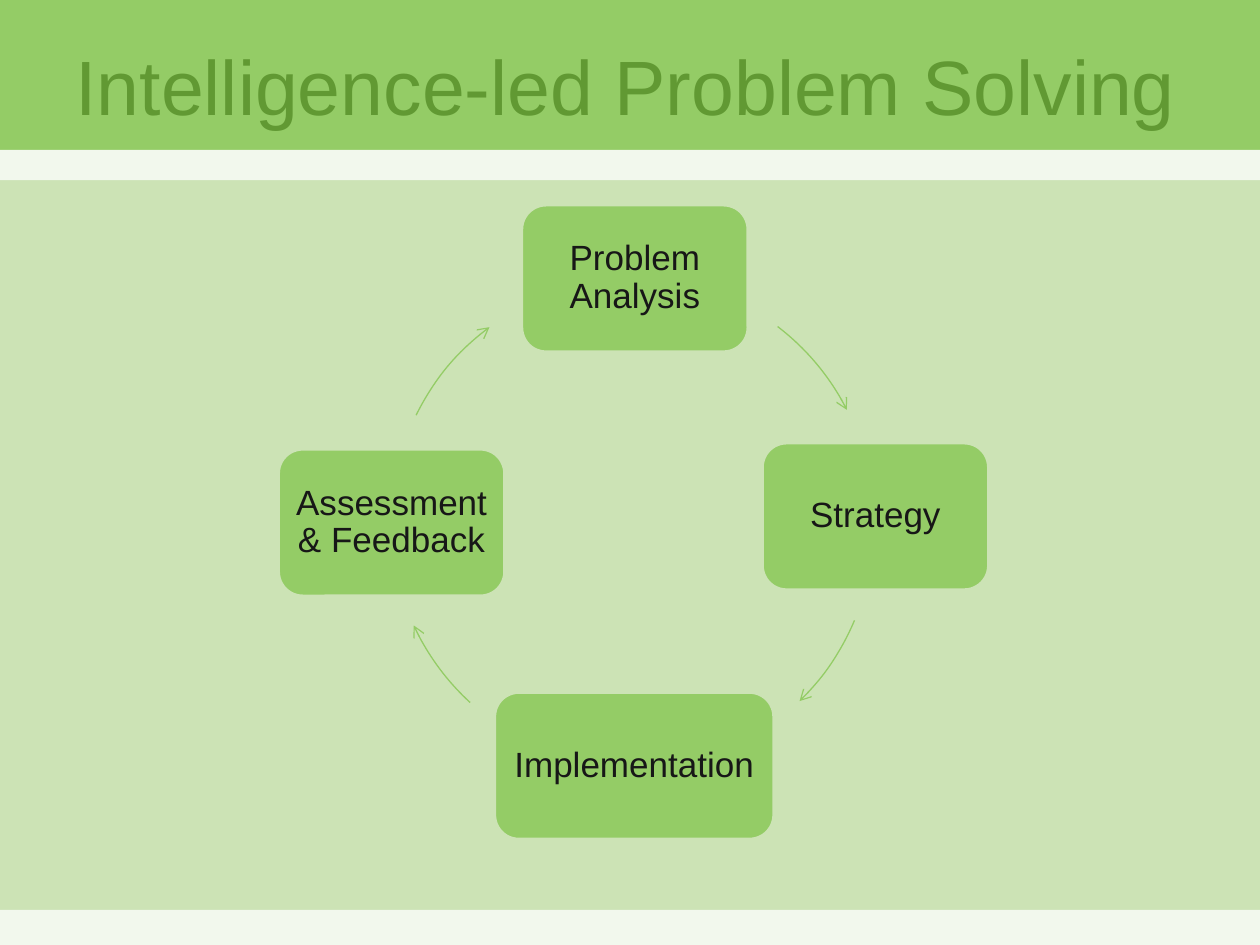
from lxml import etree
from pptx import Presentation
from pptx.dml.color import RGBColor
from pptx.enum import shapes, text
from pptx.oxml import ns
from pptx.util import Pt

GREEN = RGBColor(0x94, 0xCC, 0x66)
PALE_GREEN = RGBColor(0xCC, 0xE3, 0xB5)
OFF_WHITE = RGBColor(0xF2, 0xF8, 0xED)
DARK_GREEN = RGBColor(0x61, 0x99, 0x33)
INK = RGBColor(0x17, 0x17, 0x17)

WIDTH, HEIGHT = 720, 540
STEP_HEIGHT = 84.24
ARC_SIZE = 278.6

# Label, left, top, width, relative to the cycle's box
STEPS = [
    ("Problem Analysis", 139.5, 0, 129.6),
    ("Strategy", 277, 136, 129.6),
    ("Implementation", 124, 278.5, 159.84),
    ("Assessment & Feedback", 0.5, 139.5, 129.6),
]
# Left, top, start angle, end angle (degrees clockwise from three o'clock)
ARCS = [
    (62, 41, 307.4, 333.1),
    (62, 44.5, 22.7, 45.8),
    (65, 42.5, 132.5, 155.1),
    (65, 42.5, 206.2, 233.4),
]


def add_plain_shape(slide, kind, left, top, width, height, fill=None):
    shape = slide.shapes.add_shape(kind, Pt(left), Pt(top), Pt(width), Pt(height))
    shape.shadow.inherit = False
    if fill is None:
        shape.fill.background()
    else:
        shape.fill.solid()
        shape.fill.fore_color.rgb = fill
    shape.line.fill.background()
    return shape


def format_text(shape, size, color):
    frame = shape.text_frame
    frame.word_wrap = True
    frame.auto_size = text.MSO_AUTO_SIZE.NONE
    frame.vertical_anchor = text.MSO_ANCHOR.MIDDLE
    font = frame.paragraphs[0].runs[0].font
    font.name, font.size, font.color.rgb = "Arial", Pt(size), color


def add_bands(slide):
    """Draw the header and the two light stripes; return the last band."""
    for top, height, color in [(0, 94.3, GREEN), (85.7, 17.3, OFF_WHITE), (520, 20, OFF_WHITE)]:
        band = add_plain_shape(slide, shapes.MSO_SHAPE.RECTANGLE, 0, top, WIDTH, height, color)
    return band


def place_title(slide, left, top, width, height):
    title = slide.shapes.title
    title.left, title.top, title.width, title.height = Pt(left), Pt(top), Pt(width), Pt(height)
    title.text_frame.text = "Intelligence-led Problem Solving"
    title.text_frame.paragraphs[0].alignment = text.PP_ALIGN.LEFT
    format_text(title, 44, DARK_GREEN)
    return title


def add_step(slide, label, left, top, width):
    step = add_plain_shape(slide, shapes.MSO_SHAPE.ROUNDED_RECTANGLE,
                           left, top, width, STEP_HEIGHT, GREEN)
    step.line.color.rgb = PALE_GREEN
    step.line.width = Pt(2)
    frame = step.text_frame
    frame.text = label
    frame.margin_left = frame.margin_right = Pt(3)
    frame.margin_top = frame.margin_bottom = Pt(6)
    frame.paragraphs[0].alignment = text.PP_ALIGN.CENTER
    frame.paragraphs[0].line_spacing = 0.9
    format_text(step, 20, INK)


def add_arc_arrow(slide, left, top, start, end):
    arc = add_plain_shape(slide, shapes.MSO_SHAPE.ARC, left, top, ARC_SIZE, ARC_SIZE)
    # Angles are stored in 60000ths of a degree, adjustments in 100000ths
    arc.adjustments[0], arc.adjustments[1] = start * 0.6, end * 0.6
    arc.line.color.rgb = GREEN
    arc.line.width = Pt(0.75)
    line = arc.line._get_or_add_ln()
    etree.SubElement(line, ns.qn("a:tailEnd"), type="arrow")


def add_cycle(slide, left, top):
    for (label, x, y, width), (arc_x, arc_y, start, end) in zip(STEPS, ARCS):
        add_step(slide, label, left + x, top + y, width)
        add_arc_arrow(slide, left + arc_x, top + arc_y, start, end)


def main():
    presentation = Presentation()
    presentation.slide_width, presentation.slide_height = Pt(WIDTH), Pt(HEIGHT)
    slide = presentation.slides.add_slide(presentation.slide_layouts[5])
    slide.background.fill.solid()
    slide.background.fill.fore_color.rgb = PALE_GREEN
    last_band = add_bands(slide)
    title = place_title(slide, 36, 20, 653, 57)
    last_band._element.addnext(title._element)  # bring the title above the bands
    add_cycle(slide, 158.5, 117)
    presentation.save("out.pptx")


if __name__ == "__main__":
    main()
